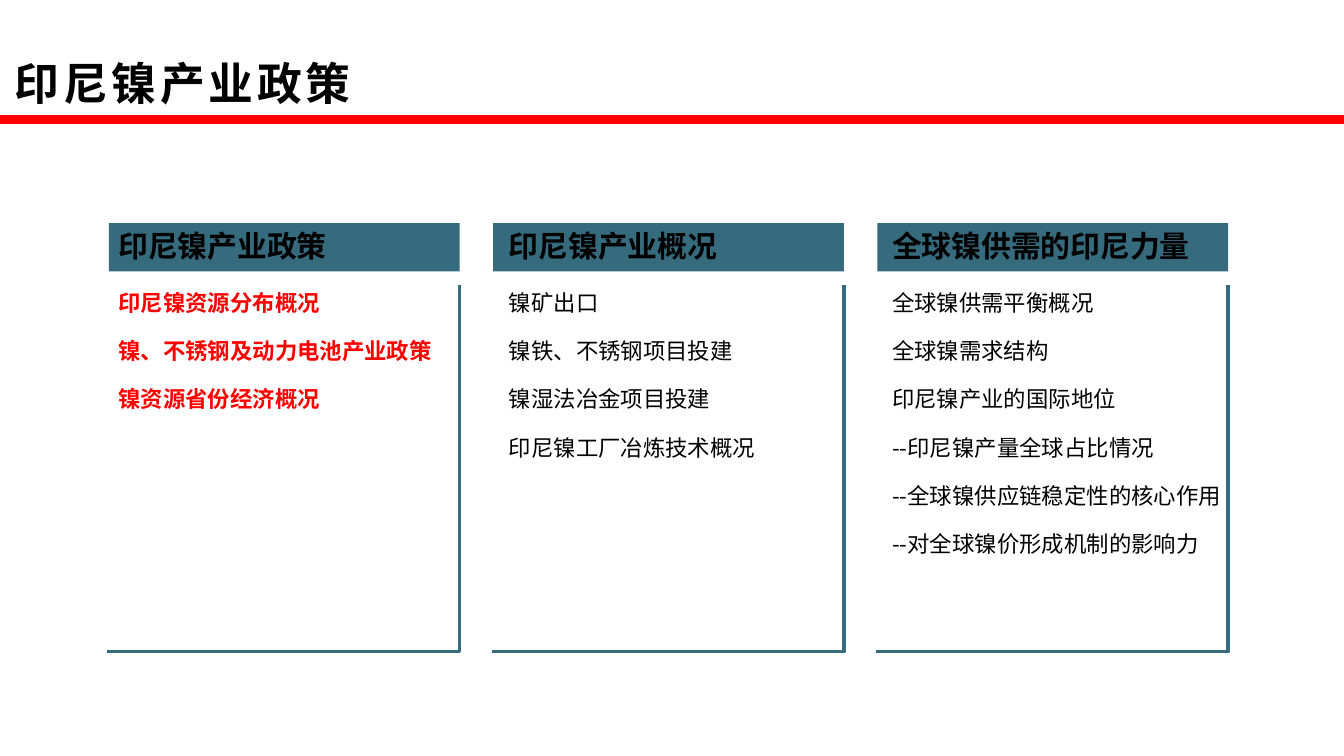
from dataclasses import dataclass

import pptx
import pptx.dml.color
import pptx.enum.shapes
import pptx.enum.text
import pptx.oxml
import pptx.oxml.ns
import pptx.util

Cm, Pt = pptx.util.Cm, pptx.util.Pt
ANCHOR = pptx.enum.text.MSO_ANCHOR
FONT = "Noto Sans CJK SC"
BLACK, RED, TEAL = "000000", "FF0000", "366B7E"

# Layout in centimetres
FIRST_LEFT, PITCH, WIDTH = 2.06, 7.26, 6.63
HEADER_TOP, HEADER_H = 4.22, 0.91
FRAME_TOP, FRAME_BOTTOM = 5.38, 12.32
BODY_TOP = 5.46


@dataclass
class Column:
    heading: str
    items: list[str]
    inset: float
    color: str = BLACK
    bold: bool = False


COLUMNS = [
    Column("印尼镍产业政策",
           ["印尼镍资源分布概况", "镍、不锈钢及动力电池产业政策", "镍资源省份经济概况"],
           0.18, RED, True),
    Column("印尼镍产业概况",
           ["镍矿出口", "镍铁、不锈钢项目投建", "镍湿法冶金项目投建", "印尼镍工厂冶炼技术概况"],
           0.3),
    Column("全球镍供需的印尼力量",
           ["全球镍供需平衡概况", "全球镍需求结构", "印尼镍产业的国际地位",
            "--印尼镍产量全球占比情况", "--全球镍供应链稳定性的核心作用",
            "--对全球镍价形成机制的影响力"],
           0.28),
]


def rgb(value: str) -> pptx.dml.color.RGBColor:
    return pptx.dml.color.RGBColor.from_string(value)


def format_runs(tf, size: float, color: str, bold: bool) -> None:
    for p in tf.paragraphs:
        p.alignment = pptx.enum.text.PP_ALIGN.LEFT
        for r in p.runs:
            r.font.size, r.font.bold, r.font.name = Pt(size), bold, FONT
            r.font.color.rgb = rgb(color)
            ea = pptx.oxml.parse_xml(
                f'<a:ea {pptx.oxml.ns.nsdecls("a")} typeface="{FONT}"/>')
            r.font._element.find(pptx.oxml.ns.qn("a:latin")).addnext(ea)


def set_margins(tf, left: float, top: float, right: float, bottom: float) -> None:
    tf.margin_left, tf.margin_top = Cm(left), Cm(top)
    tf.margin_right, tf.margin_bottom = Cm(right), Cm(bottom)


def add_text(s, left: float, top: float, width: float, height: float,
             lines: list[str], size: float, color: str, bold: bool,
             anchor=ANCHOR.TOP, gap: float = 0) -> None:
    tf = s.shapes.add_textbox(Cm(left), Cm(top), Cm(width), Cm(height)).text_frame
    tf.word_wrap = True
    tf.vertical_anchor = anchor
    set_margins(tf, 0, 0, 0, 0)
    tf.text = "\n".join(lines)
    for p in tf.paragraphs[1:]:
        p.space_before = Pt(gap)
    format_runs(tf, size, color, bold)


def add_column(s, left: float, col: Column) -> None:
    # Header bar
    sp = s.shapes.add_shape(pptx.enum.shapes.MSO_SHAPE.RECTANGLE, Cm(left),
                            Cm(HEADER_TOP), Cm(WIDTH), Cm(HEADER_H))
    sp.shadow.inherit = False
    sp.fill.solid()
    sp.fill.fore_color.rgb = rgb(TEAL)
    sp.line.fill.background()

    # Heading and items
    text_left = left + col.inset
    add_text(s, text_left, HEADER_TOP + 0.08, 6.53, 0.69, [col.heading],
             16, BLACK, True, ANCHOR.MIDDLE)
    add_text(s, text_left, BODY_TOP, 6.38, len(col.items) * 1.02 - 0.4, col.items,
             12, col.color, col.bold, gap=11.5)

    # Open frame along the bottom and right side
    right = Cm(left + WIDTH)
    builder = s.shapes.build_freeform(Cm(left - 0.03), Cm(FRAME_BOTTOM))
    builder.add_line_segments([(right, Cm(FRAME_BOTTOM)), (right, Cm(FRAME_TOP))],
                              close=False)
    sp = builder.convert_to_shape()
    sp.shadow.inherit = False
    sp.fill.background()
    sp.line.color.rgb = rgb(TEAL)
    sp.line.width = Pt(1.75)


def add_title(s, text: str) -> None:
    sp = s.shapes.title
    sp.left, sp.top, sp.width, sp.height = Cm(0), Cm(0.89), Cm(25.4), Cm(1.35)
    tf = sp.text_frame
    tf.vertical_anchor = ANCHOR.MIDDLE
    set_margins(tf, 0.28, 0.1, 0.2, 0.1)
    tf.text = text
    format_runs(tf, 24, BLACK, True)
    tf.paragraphs[0].runs[0].font._element.set("spc", "200")


def add_rule(s, y: float) -> None:
    line = s.shapes.add_connector(pptx.enum.shapes.MSO_CONNECTOR.STRAIGHT,
                                  Cm(0), Cm(y), Cm(25.4), Cm(y))
    line.line.color.rgb = rgb(RED)
    line.line.width = Pt(5)
    line._element.spPr.append(pptx.oxml.parse_xml(
        f'<a:effectLst {pptx.oxml.ns.nsdecls("a")}/>'))


def main() -> None:
    prs = pptx.Presentation()
    prs.slide_width, prs.slide_height = Cm(25.4), Cm(14.29)
    s = prs.slides.add_slide(prs.slide_layouts[5])
    add_title(s, "印尼镍产业政策")
    add_rule(s, 2.26)
    for i, col in enumerate(COLUMNS):
        add_column(s, FIRST_LEFT + i * PITCH, col)
    prs.save("out.pptx")


if __name__ == "__main__":
    main()
